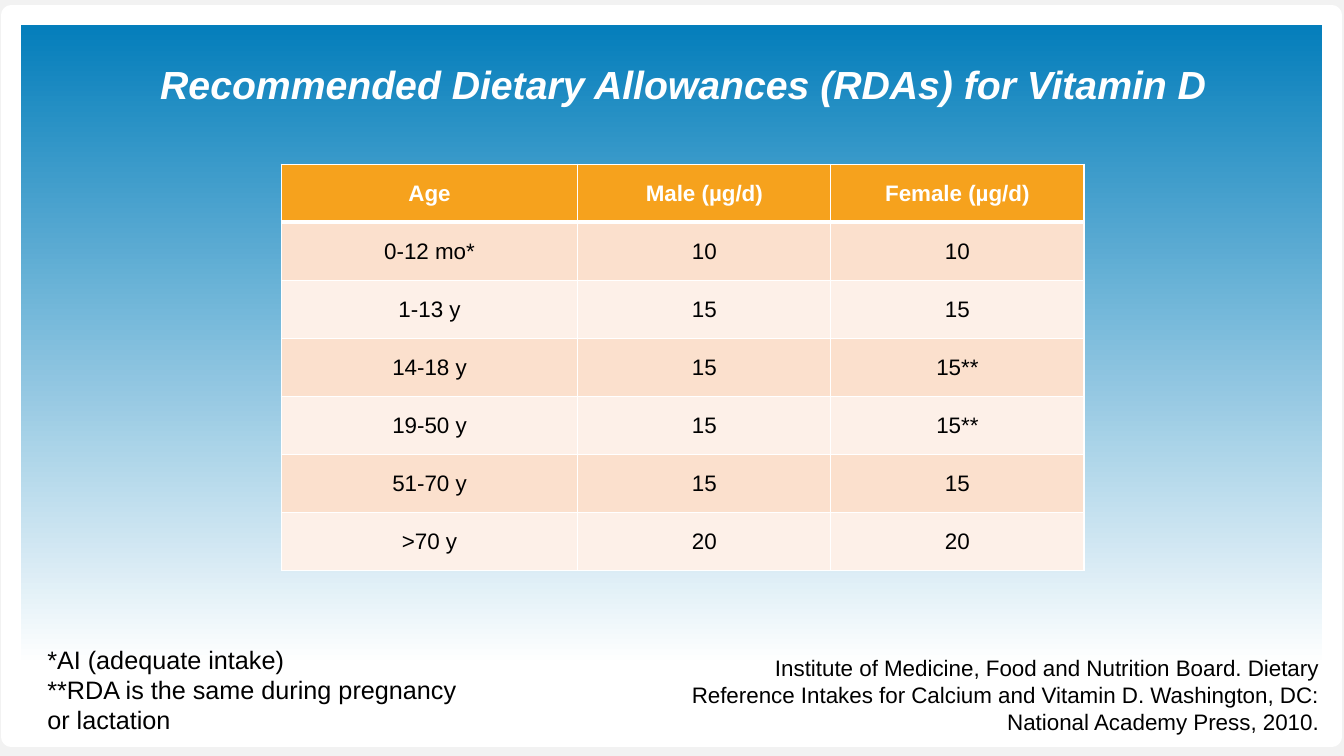
from dataclasses import dataclass

from lxml import etree
from pptx import Presentation
from pptx.dml.color import RGBColor
from pptx.enum.shapes import MSO_SHAPE
from pptx.enum.text import MSO_ANCHOR, PP_ALIGN
from pptx.oxml.ns import qn
from pptx.util import Inches, Pt

RECT = MSO_SHAPE.RECTANGLE
MIDDLE = MSO_ANCHOR.MIDDLE
LEFT, CENTER, RIGHT = PP_ALIGN.LEFT, PP_ALIGN.CENTER, PP_ALIGN.RIGHT

FONT = "Arial"
COLORS = {
    "page": "F2F2F2",
    "blue": "007CBA",
    "white": "FFFFFF",
    "black": "000000",
    "header": "F6A21D",
    "band_dark": "FBE0CD",
    "band_light": "FDF0E8",
}

# Lengths are in a grid of 100 columns by 100 rows over the slide.
WIDTH, HEIGHT = Inches(13.33), Inches(7.5)
GRID = 100

RDA_COLUMNS = (22.06, 18.83, 18.83)
RDA_ROW = 7.68
RDA_ROWS = (
    ("Age", "Male (µg/d)", "Female (µg/d)"),
    ("0-12 mo*", "10", "10"),
    ("1-13 y", "15", "15"),
    ("14-18 y", "15", "15**"),
    ("19-50 y", "15", "15**"),
    ("51-70 y", "15", "15"),
    (">70 y", "20", "20"),
)


@dataclass(frozen=True)
class Box:
    left: float
    top: float
    width: float
    height: float

    def emu(self) -> tuple[int, int, int, int]:
        return cols(self.left), rows(self.top), cols(self.width), rows(self.height)


@dataclass(frozen=True)
class Style:
    size: int
    color: str = "black"
    bold: bool = False
    italic: bool = False
    align: PP_ALIGN = LEFT
    line_spacing: float = 1.0


@dataclass(frozen=True)
class Label:
    box: Box
    text: str
    style: Style


PANEL = Box(0.83, 2, 98.27, 95.47)
RDA_TABLE = Box(20.93, 21.73, sum(RDA_COLUMNS), RDA_ROW * len(RDA_ROWS))
HEADER_STYLE = Style(16, "white", bold=True, align=CENTER)
BODY_STYLE = Style(16, align=CENTER)

LABELS = (
    Label(
        Box(2.78, 84.53, 32.48, 13.47),
        "*AI (adequate intake)\n**RDA is the same during pregnancy or lactation",
        Style(18),
    ),
    Label(
        Box(48.84, 85.87, 50.04, 12.13),
        "Institute of Medicine, Food and Nutrition Board. Dietary Reference Intakes "
        "for Calcium and Vitamin D. Washington, DC: National Academy Press, 2010.",
        Style(16, align=RIGHT),
    ),
    Label(
        Box(10.65, 8, 80.35, 12),
        "Recommended Dietary Allowances (RDAs) for Vitamin D",
        Style(28, "white", bold=True, italic=True, align=CENTER, line_spacing=0.9),
    ),
)


def cols(n: float) -> int:
    return round(WIDTH * n / GRID)


def rows(n: float) -> int:
    return round(HEIGHT * n / GRID)


def rgb(name: str) -> RGBColor:
    return RGBColor.from_string(COLORS[name])


def write(tf, text: str, style: Style) -> None:
    tf.text = text
    for p in tf.paragraphs:
        p.alignment = style.align
        p.line_spacing = style.line_spacing
        for r in p.runs:
            r.font.name = FONT
            r.font.size = Pt(style.size)
            r.font.bold = style.bold
            r.font.italic = style.italic
            r.font.color.rgb = rgb(style.color)


def add_panel(s) -> None:
    sp = s.shapes.add_shape(RECT, *PANEL.emu())
    sp.shadow.inherit = False
    sp.fill.gradient()
    sp.fill.gradient_angle = 270
    stops = ((0, "blue"), (0.9, "white"))
    for stop, (position, color) in zip(sp.fill.gradient_stops, stops):
        stop.position = position
        stop.color.rgb = rgb(color)
    sp.line.color.rgb = rgb("white")
    sp.line.width = Pt(14)
    etree.SubElement(sp.line.fill._xPr, qn("a:round"))


def add_label(s, label: Label) -> None:
    tf = s.shapes.add_textbox(*label.box.emu()).text_frame
    tf.word_wrap = True
    write(tf, label.text, label.style)


def set_borders(cell, top: int, bottom: int) -> None:
    """Draw white cell borders; widths are in points."""
    tc_pr = cell._tc.get_or_add_tcPr()
    for side, width in (("L", 1), ("R", 1), ("T", top), ("B", bottom)):
        ln = etree.SubElement(tc_pr, qn(f"a:ln{side}"), w=str(Pt(width)))
        fill = etree.SubElement(ln, qn("a:solidFill"))
        etree.SubElement(fill, qn("a:srgbClr"), val=COLORS["white"])


def add_rda_table(s) -> None:
    frame = s.shapes.add_table(len(RDA_ROWS), len(RDA_COLUMNS), *RDA_TABLE.emu())
    table = frame.table
    table.horz_banding = False
    for column, width in zip(table.columns, RDA_COLUMNS):
        column.width = cols(width)
    for i, values in enumerate(RDA_ROWS):
        table.rows[i].height = rows(RDA_ROW)
        band = "header" if i == 0 else ("band_light", "band_dark")[i % 2]
        for j, value in enumerate(values):
            cell = table.cell(i, j)
            cell.vertical_anchor = MIDDLE
            set_borders(cell, top=3 if i == 1 else 1, bottom=3 if i == 0 else 1)
            cell.fill.solid()
            cell.fill.fore_color.rgb = rgb(band)
            write(cell.text_frame, value, BODY_STYLE if i else HEADER_STYLE)


def main() -> None:
    prs = Presentation()
    prs.slide_width, prs.slide_height = WIDTH, HEIGHT
    s = prs.slides.add_slide(prs.slide_layouts[6])
    s.background.fill.solid()
    s.background.fill.fore_color.rgb = rgb("page")
    add_panel(s)
    add_rda_table(s)
    for label in LABELS:
        add_label(s, label)
    prs.save("out.pptx")


if __name__ == "__main__":
    main()
